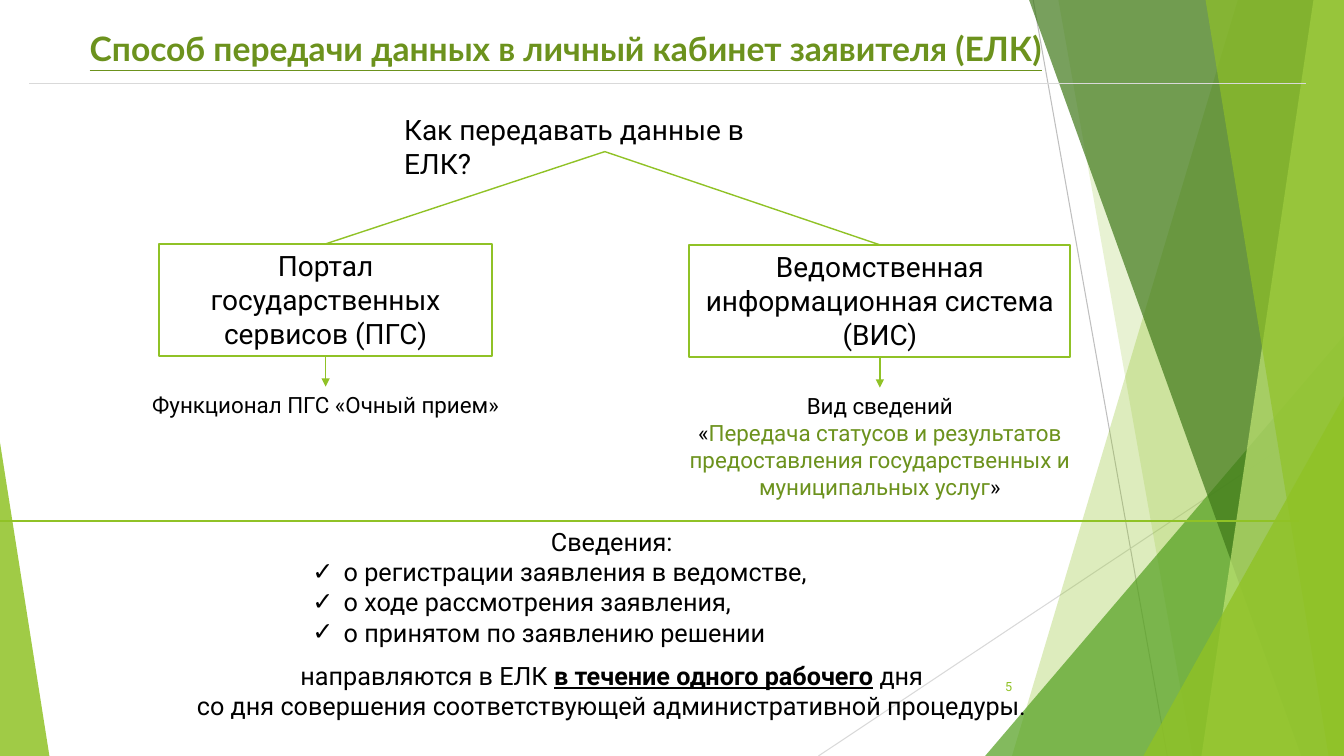
from dataclasses import dataclass

from lxml import etree
from pptx import Presentation
from pptx.dml.color import RGBColor
from pptx.enum.shapes import MSO_CONNECTOR, MSO_SHAPE
from pptx.enum.text import MSO_ANCHOR, MSO_AUTO_SIZE, PP_ALIGN
from pptx.oxml.ns import qn
from pptx.util import Pt

LINE = MSO_CONNECTOR.STRAIGHT
RECT, WEDGE = MSO_SHAPE.RECTANGLE, MSO_SHAPE.ISOSCELES_TRIANGLE
LEFT, MID, RIGHT = PP_ALIGN.LEFT, PP_ALIGN.CENTER, PP_ALIGN.RIGHT
TOP, CENTER = MSO_ANCHOR.TOP, MSO_ANCHOR.MIDDLE
FIXED = MSO_AUTO_SIZE.NONE


@dataclass(frozen=True)
class Theme:
    lime: str = "90C226"
    olive: str = "6C921D"
    green: str = "54A021"
    dark: str = "3F7819"
    pale: str = "C0E474"
    gray: str = "BFBFBF"
    light: str = "D9D9D9"
    black: str = "000000"
    white: str = "FFFFFF"
    head: str = "Lato"
    text: str = "Roboto"
    title: int = 24
    large: int = 20
    body: int = 18
    note: int = 16
    small: int = 9


THEME = Theme()


def rgb(code):
    return RGBColor.from_string(code)


def place(shape, box):
    shape.left, shape.top, shape.width, shape.height = map(Pt, box)


def prepare(shape, anchor=TOP):
    frame = shape.text_frame
    frame.word_wrap = True
    frame.auto_size = FIXED
    frame.vertical_anchor = anchor
    return frame


def write(para, runs, size, align=MID, color=THEME.black, font=THEME.text):
    para.alignment = align
    for text, tint, strong in runs:
        run = para.add_run()
        run.text = text
        face = run.font
        face.name, face.size = font, Pt(size)
        face.bold = face.underline = strong
        face.color.rgb = rgb(tint or color)


def label(slide, box, lines, size, align=MID, color=THEME.black, anchor=TOP):
    shape = slide.shapes.add_textbox(*map(Pt, box))
    frame = prepare(shape, anchor)
    for i, runs in enumerate(lines):
        para = frame.add_paragraph() if i else frame.paragraphs[0]
        write(para, runs, size, align, color)
    return shape


def rule(slide, start, end, color, width=1, arrow=False):
    line = slide.shapes.add_connector(LINE, *map(Pt, start + end))
    line.line.color.rgb = rgb(color)
    line.line.width = Pt(width)
    if arrow:
        etree.SubElement(line.line._get_or_add_ln(), qn("a:tailEnd"), type="triangle")
    etree.SubElement(line._element.spPr, qn("a:effectLst"))
    return line


def join(slide, upper, lower, arrow=False):
    line = rule(slide, (0, 0), (0, 0), THEME.lime, arrow=arrow)
    line.begin_connect(upper, 2)
    line.end_connect(lower, 0)


def tint(shape, color, alpha):
    shape.shadow.inherit = False
    shape.fill.solid()
    shape.fill.fore_color.rgb = rgb(color)
    shape.line.fill.background()
    node = shape._element.spPr.find(f"{qn('a:solidFill')}/{qn('a:srgbClr')}")
    etree.SubElement(node, qn("a:alpha"), val=str(alpha * 1000))


def band(slide, box, top, base, color, alpha):
    x, y, w, h = box
    edge, foot = x + w, y + h
    pen = slide.shapes.build_freeform(Pt(x + top), Pt(y))
    pen.add_line_segments(
        [(Pt(a), Pt(b)) for a, b in ((edge, y), (edge, foot), (x + base, foot))]
    )
    tint(pen.convert_to_shape(), color, alpha)


def wedge(slide, box, width, height, side, color, alpha):
    x, y, w, h = box
    spot = (x + (w - width) * side, y + h - height, width, height)
    shape = slide.shapes.add_shape(WEDGE, *map(Pt, spot))
    shape.adjustments[0] = side
    tint(shape, color, alpha)


def decor(slide, box):
    x, y, w, h = box
    rule(slide, (x + 738, y), (x + 833.8, y + h), THEME.gray, 0.75)
    rule(slide, (x + w, y + 290.2), (x + 584.6, y + h), THEME.light, 0.75)
    band(slide, box, 884.2, 722.9, THEME.lime, 30)
    band(slide, box, 756, 851.8, THEME.lime, 20)
    wedge(slide, box, 256.3, 300.2, 1, THEME.green, 72)
    band(slide, box, 735.1, 929.5, THEME.dark, 70)
    band(slide, box, 938.2, 858.2, THEME.pale, 70)
    band(slide, box, 861.1, 949, THEME.lime, 65)
    wedge(slide, box, 143.3, 257, 1, THEME.lime, 80)
    wedge(slide, box, 35.3, 223.9, 0, THEME.lime, 85)
    label(slide, (x + 676, y + 476, 54, 28.8), [[("5", None, None)]],
          THEME.small, RIGHT, THEME.lime, CENTER)


def header(slide, box):
    x, y, w, h = box
    title = slide.shapes.title
    slide.shapes._spTree.append(title._element)
    place(title, box)
    runs = [("Способ передачи данных в личный кабинет заявителя (ЕЛК)", None, True)]
    write(prepare(title).paragraphs[0], runs, THEME.title, LEFT, THEME.olive, THEME.head)
    rule(slide, (x - 36, y + h + 7.2), (x + w, y + h + 7.2), THEME.light)


def branch(slide, box, root, name, lines, width, height):
    x, y, w, h = box
    node = slide.shapes.add_shape(RECT, *map(Pt, box))
    node.shadow.inherit = False
    node.fill.solid()
    node.fill.fore_color.rgb = rgb(THEME.white)
    node.line.color.rgb = rgb(THEME.lime)
    node.line.width = Pt(1.5)
    write(prepare(node).paragraphs[0], [(name, None, None)], THEME.large)
    spot = (x + (w - width) / 2, y + h + 22, width, height)
    note = label(slide, spot, lines, THEME.note)
    join(slide, root, node)
    join(slide, node, note, True)


def tree(slide, box):
    x, y, w, h = box
    root = label(slide, (x + 217.4, y, 301, 31.3),
                 [[("Как передавать данные в ЕЛК?", None, None)]], THEME.large, LEFT)
    branch(slide, (x + 49.7, y + 97.2, 237.6, 80), root,
           "Портал государственных сервисов (ПГС)",
           [[("Функционал ПГС «Очный прием»", None, None)]], 337, 26.6)
    branch(slide, (x + w - 318.7, y + 97.9, 272.2, 80), root,
           "Ведомственная информационная система (ВИС)",
           [[("Вид сведений", None, None)],
            [("«", None, None),
             ("Передача статусов и результатов предоставления "
              "государственных и муниципальных услуг", THEME.olive, None),
             ("»", None, None)]], 365, 85)


def facts(slide, box):
    body = slide.placeholders[1]
    slide.shapes._spTree.append(body._element)
    place(body, box)
    frame = prepare(body)
    lines = (
        (False, 0, [("Сведения:", None, None)]),
        (True, 0, [("о регистрации заявления в ведомстве,", None, None)]),
        (True, 0, [("о ходе рассмотрения заявления,", None, None)]),
        (True, 0, [("о принятом по заявлению решении", None, None)]),
        (False, 9.5, [("направляются в ЕЛК ", None, None),
                      ("в течение одного рабочего", None, True),
                      (" дня", None, False)]),
        (False, 0, [("со дня совершения соответствующей "
                     "административной процедуры.", None, None)]),
    )
    for i, (tick, gap, runs) in enumerate(lines):
        para = frame.add_paragraph() if i else frame.paragraphs[0]
        write(para, runs, THEME.body, LEFT if tick else MID)
        para.space_before = Pt(gap)
        props = para._p.get_or_add_pPr()
        props.set("marL", str(Pt(166.3 if tick else 0)))
        props.set("indent", str(Pt(-22.3 if tick else 0)))
        if tick:
            etree.SubElement(props, qn("a:buChar"), char="✓")
        else:
            etree.SubElement(props, qn("a:buNone"))
    x, y = box[:2]
    rule(slide, (x - 72, y), (x + 856, y), THEME.lime)


def main():
    deck = Presentation()
    deck.slide_width, deck.slide_height = Pt(960), Pt(540)
    slide = deck.slides.add_slide(deck.slide_layouts[1])
    decor(slide, (0, 0, 960, 540))
    header(slide, (56.9, 16.6, 876.2, 36))
    tree(slide, (64.1, 77, 747, 285))
    facts(slide, (72, 372.2, 730, 147.6))
    deck.save("out.pptx")


if __name__ == "__main__":
    main()
